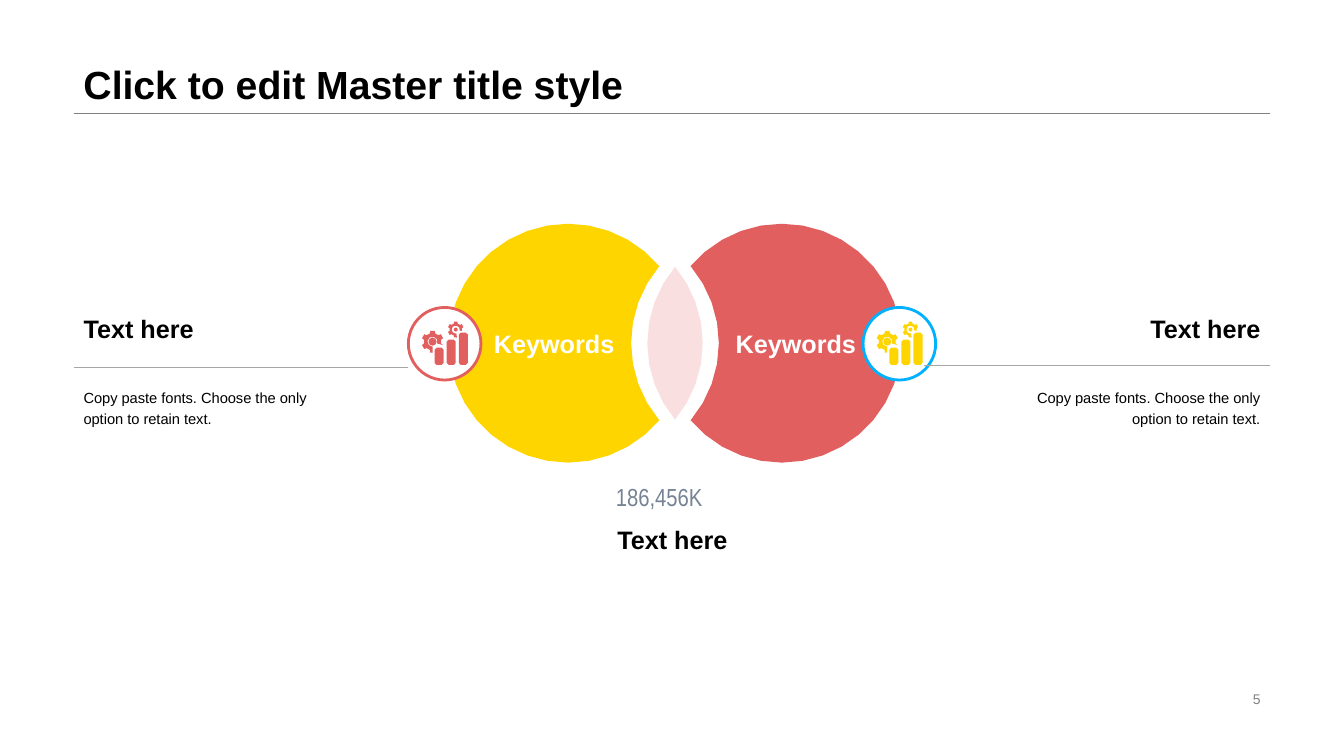
"""Build a two-circle Venn slide with badges, side callouts and a caption."""
import math

from lxml import etree
from pptx import Presentation
from pptx import util as u
from pptx.dml.color import RGBColor
from pptx.enum import shapes, text
from pptx.oxml.ns import qn

BLACK = RGBColor(0x00, 0x00, 0x00)
WHITE = RGBColor(0xFF, 0xFF, 0xFF)
RED = RGBColor(0xE1, 0x60, 0x5F)
PINK = RGBColor(0xF9, 0xDF, 0xDF)
YELLOW = RGBColor(0xFF, 0xD5, 0x00)
BLUE = RGBColor(0x00, 0xB1, 0xFF)
GRAY = RGBColor(0x80, 0x80, 0x80)
RULE = RGBColor(0xA6, 0xA6, 0xA6)
SLATE = RGBColor(0x76, 0x83, 0x94)

LEFT, CENTER, RIGHT = text.PP_ALIGN.LEFT, text.PP_ALIGN.CENTER, text.PP_ALIGN.RIGHT
TOP, MIDDLE, BOTTOM = text.MSO_ANCHOR.TOP, text.MSO_ANCHOR.MIDDLE, text.MSO_ANCHOR.BOTTOM
MARGIN, WIDTH = 0.73, 11.87


def write(sp, words, size, color, bold=False, align=LEFT, anchor=TOP,
          wrap=True, spacing=None, font="Arial"):
    tf = sp.text_frame
    tf.text = words
    tf.word_wrap = wrap
    tf.vertical_anchor = anchor
    p = tf.paragraphs[0]
    p.alignment = align
    p.line_spacing = spacing
    r = p.runs[0]
    r.font.name = font
    r.font.size = u.Pt(size)
    r.font.bold = bold
    r.font.color.rgb = color


def add_text(s, box, words, size, color, **style):
    sp = s.shapes.add_textbox(*map(u.Inches, box))
    write(sp, words, size, color, **style)


def add_rule(s, x1, x2, y, color, weight):
    line = s.shapes.add_connector(
        shapes.MSO_CONNECTOR.STRAIGHT, *map(u.Inches, (x1, y, x2, y)))
    line.line.color.rgb = color
    line.line.width = u.Pt(weight)
    etree.SubElement(line._element.spPr, qn("a:effectLst"))


def polar(cx, cy, radius, angle):
    a = math.radians(angle)
    return cx + radius * math.cos(a), cy + radius * math.sin(a)


def arc(cx, cy, radius, start, end, step=10):
    """Return points along an arc; angles in degrees, clockwise from the right."""
    count = max(1, round(abs(end - start) / step))
    return [polar(cx, cy, radius, start + (end - start) * i / count)
            for i in range(count + 1)]


def add_outline(s, contours, color):
    """Draw closed contours, given in inches, as one filled freeform."""
    contours = [[(u.Inches(x), u.Inches(y)) for x, y in c] for c in contours]
    fb = s.shapes.build_freeform(*contours[0][0], scale=1.0)
    for i, points in enumerate(contours):
        if i:
            fb.move_to(*points[0])
        fb.add_line_segments(points[1:], close=True)
    sp = fb.convert_to_shape()
    sp.shadow.inherit = False
    sp.fill.solid()
    sp.fill.fore_color.rgb = color
    sp.line.fill.background()
    return sp


def header(s, x, y, w, h):
    add_rule(s, x, x + w, y + h, GRAY, 0.25)
    add_text(s, (x, y, w, h), "Click to edit Master title style", 28, BLACK,
             bold=True, anchor=BOTTOM, spacing=0.9)


def venn(s, x, y, w, h):
    """Draw two circles notched around a lens at the centre of the box."""
    radius, cx, cy = h / 2, x + w / 2, y + h / 2
    half_lens, gap, tip = 0.275, 0.16, 40
    offset = radius - half_lens
    lens = (arc(cx - offset, cy, radius, -tip, tip)
            + arc(cx + offset, cy, radius, 180 - tip, 180 + tip))
    add_outline(s, [lens], PINK)
    for side, color in ((-1, RED), (1, YELLOW)):
        body = arc(radius, 0, radius, tip, 360 - tip)
        notch = arc(w / 2 - half_lens - gap + radius, 0, radius, 180 + tip, 180 - tip)
        points = [(cx + side * (px - w / 2), cy + py) for px, py in body + notch]
        sp = add_outline(s, [points], color)
        write(sp, "Keywords", 18, WHITE, bold=True, align=CENTER, anchor=MIDDLE, wrap=False)


def gear(cx, cy, radius, start, end, cut, hub):
    """Return a toothed gear open between two angles, and its hub."""
    valley = 0.78 * radius
    tooth = ((-18, valley), (-12, radius), (12, radius), (18, valley))
    rim = [polar(cx, cy, radius, start)]
    for middle in range(90, 391, 60):
        rim += [polar(cx, cy, reach, middle + turn) for turn, reach in tooth
                if start <= middle + turn <= end]
    return [rim + arc(cx, cy, cut, end, start, 45), arc(cx, cy, hub, 360, 0, 45)]


def bar(x, y, w, h, corner=0.02):
    """Return a bar with softened corners."""
    right, bottom = x + w - corner, y + h - corner
    centers = ((right, bottom), (x + corner, bottom),
               (x + corner, y + corner), (right, y + corner))
    return [point for i, (cx, cy) in enumerate(centers)
            for point in arc(cx, cy, corner, 90 * i, 90 * i + 90, 90)]


def badge(s, x, y, size, color, ring):
    sp = s.shapes.add_shape(shapes.MSO_SHAPE.OVAL, *map(u.Inches, (x, y, size, size)))
    sp.shadow.inherit = False
    sp.fill.solid()
    sp.fill.fore_color.rgb = WHITE
    sp.line.color.rgb = ring
    sp.line.width = u.Pt(2)
    bars = [bar(x + 0.26 + 0.12 * i, y + top, 0.09, 0.57 - top)
            for i, top in enumerate((0.4, 0.32, 0.25))]
    gears = (gear(x + 0.24, y + 0.34, 0.11, 90, 381, 0.05, 0.04)
             + gear(x + 0.47, y + 0.22, 0.08, 81, 375, 0.04, 0.02))
    add_outline(s, bars + gears, color)


def callout(s, x, y, w, align):
    add_text(s, (x, y, w, 0.56), "Text here", 18, BLACK, bold=True, align=align, wrap=False)
    add_text(s, (x, y + 0.71, w, 0.63),
             "Copy paste fonts. Choose the only option to retain text.",
             10.5, BLACK, align=align, spacing=1.2)


def caption(s, x, y, w):
    add_text(s, (x + 0.36, y, 1.31, 0.39), "186,456K", 17.6, SLATE,
             wrap=False, font="Arial Narrow")
    add_text(s, (x, y + 0.39, w, 0.46), "Text here", 18, BLACK,
             bold=True, align=CENTER, anchor=MIDDLE, wrap=False)


def main():
    prs = Presentation()
    prs.slide_width, prs.slide_height = u.Inches(13.33), u.Inches(7.5)
    s = prs.slides.add_slide(prs.slide_layouts[6])
    right = MARGIN + WIDTH
    header(s, MARGIN, 0, WIDTH, 1.12)
    venn(s, 4.45, 2.22, 4.49, 2.37)
    badge(s, 4.05, 3.05, 0.72, RED, RED)
    badge(s, 8.56, 3.05, 0.72, YELLOW, BLUE)
    callout(s, MARGIN, 3.06, 2.42, LEFT)
    callout(s, right - 2.75, 3.06, 2.75, RIGHT)
    add_rule(s, 4.05, MARGIN, 3.64, RULE, 0.5)
    add_rule(s, right, 9.16, 3.62, RULE, 0.5)
    caption(s, 5.65, 4.73, 2.04)
    add_text(s, (right - 3.18, 6.82, 3.18, 0.23), "5", 10, GRAY, align=RIGHT, anchor=MIDDLE)
    prs.save("out.pptx")


if __name__ == "__main__":
    main()
